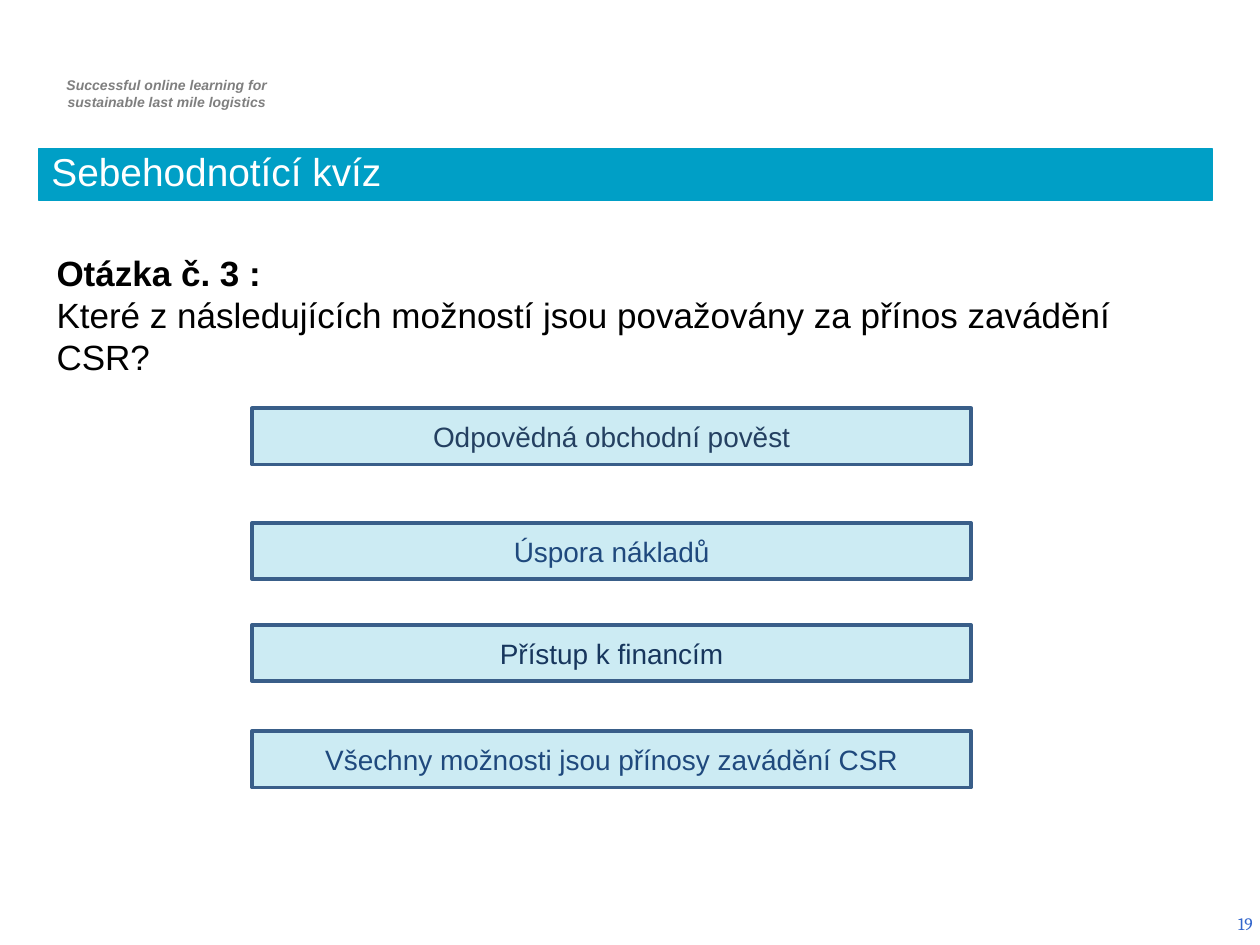
from dataclasses import dataclass
from typing import Any

from lxml.etree import SubElement
from pptx import Presentation
from pptx.dml.color import RGBColor
from pptx.enum.shapes import MSO_SHAPE
from pptx.enum.text import MSO_ANCHOR, PP_ALIGN
from pptx.oxml.ns import qn
from pptx.util import Pt


@dataclass(frozen=True)
class Theme:
    accent: str = "009FC6"
    accent_alpha: int = 20
    border: str = "395E89"
    answer_blue: str = "1F497D"
    answer_slate: str = "244061"
    answer_navy: str = "17365D"
    motto: str = "7F7F7F"
    number: str = "3366CC"
    body: str = "000000"
    light: str = "FFFFFF"
    font: str = "Arial"
    number_font: str = "Cambria"
    motto_size: float = 8
    number_size: float = 10
    title_size: float = 22.2
    question_size: float = 20
    answer_size: float = 16


@dataclass(frozen=True)
class Box:
    left: float
    top: float
    width: float
    height: float


@dataclass(frozen=True)
class Line:
    text: str
    color: str
    size: float
    font: str = "Arial"
    bold: bool = False
    italic: bool = False


@dataclass(frozen=True)
class Answer:
    text: str
    top: float
    color: str


THEME = Theme()
ANSWER_LEFT, ANSWER_WIDTH, ANSWER_HEIGHT = 144, 411, 32.2
ANSWERS = [
    Answer("Odpovědná obchodní pověst", 233.3, THEME.answer_slate),
    Answer("Úspora nákladů", 298.8, THEME.answer_blue),
    Answer("Přístup k financím", 357.1, THEME.answer_navy),
    Answer("Všechny možnosti jsou přínosy zavádění CSR", 417.8, THEME.answer_blue),
]


def apply(target: Any, values: dict[str, Any]) -> None:
    for name, value in values.items():
        setattr(target, name, value)


def place(box: Box) -> list[Pt]:
    return [Pt(length) for length in (box.left, box.top, box.width, box.height)]


def write(shape: Any, lines: list[Line], anchor: MSO_ANCHOR, paragraph_format: dict[str, Any]) -> None:
    frame = shape.text_frame
    apply(frame, {"word_wrap": True, "vertical_anchor": anchor})
    for index, line in enumerate(lines):
        paragraph = frame.add_paragraph() if index else frame.paragraphs[0]
        apply(paragraph, paragraph_format)
        run = paragraph.add_run()
        run.text = line.text
        apply(run.font, {"name": line.font, "size": Pt(line.size), "bold": line.bold, "italic": line.italic})
        run.font.color.rgb = RGBColor.from_string(line.color)


def add_text(slide: Any, box: Box, lines: list[Line], anchor: MSO_ANCHOR, align: PP_ALIGN) -> None:
    write(slide.shapes.add_textbox(*place(box)), lines, anchor, {"alignment": align})


def add_bar(slide: Any, box: Box, border: str, weight: float) -> Any:
    bar = slide.shapes.add_shape(MSO_SHAPE.RECTANGLE, *place(box))
    bar.shadow.inherit = False
    bar.fill.solid()
    bar.fill.fore_color.rgb = RGBColor.from_string(THEME.accent)
    bar.line.color.rgb = RGBColor.from_string(border)
    bar.line.width = Pt(weight)
    return bar


def add_title(slide: Any, text: str) -> None:
    bar = add_bar(slide, Box(22.3, 85, 670.3, 29.5), THEME.accent, 0.75)
    write(bar, [Line(text, THEME.light, THEME.title_size)], MSO_ANCHOR.BOTTOM,
          {"alignment": PP_ALIGN.LEFT, "line_spacing": 0.8})


def add_answer(slide: Any, answer: Answer) -> None:
    bar = add_bar(slide, Box(ANSWER_LEFT, answer.top, ANSWER_WIDTH, ANSWER_HEIGHT), THEME.border, 2)
    tint = bar.fill._xPr.find(qn("a:solidFill")).find(qn("a:srgbClr"))
    SubElement(tint, qn("a:alpha")).set("val", str(THEME.accent_alpha * 1000))
    write(bar, [Line(answer.text, answer.color, THEME.answer_size)], MSO_ANCHOR.MIDDLE,
          {"alignment": PP_ALIGN.CENTER})


def main() -> None:
    deck = Presentation()
    apply(deck, {"slide_width": Pt(720), "slide_height": Pt(540)})
    slide = deck.slides.add_slide(deck.slide_layouts[6])

    motto = ["Successful online learning for", "sustainable last mile logistics"]
    add_text(slide, Box(22.3, 40.3, 146.2, 26.6),
             [Line(text, THEME.motto, THEME.motto_size, bold=True, italic=True) for text in motto],
             MSO_ANCHOR.TOP, PP_ALIGN.CENTER)
    add_text(slide, Box(555.1, 513.4, 167.8, 28.8),
             [Line("19", THEME.number, THEME.number_size, THEME.number_font)],
             MSO_ANCHOR.MIDDLE, PP_ALIGN.RIGHT)
    add_title(slide, "Sebehodnotící kvíz")
    add_text(slide, Box(25.2, 140.4, 670.3, 104.4), [
        Line("Otázka č. 3 :", THEME.body, THEME.question_size, bold=True),
        Line("Které z následujících možností jsou považovány za přínos zavádění CSR?",
             THEME.body, THEME.question_size),
    ], MSO_ANCHOR.TOP, PP_ALIGN.LEFT)
    for answer in ANSWERS:
        add_answer(slide, answer)

    deck.save("out.pptx")


if __name__ == "__main__":
    main()
